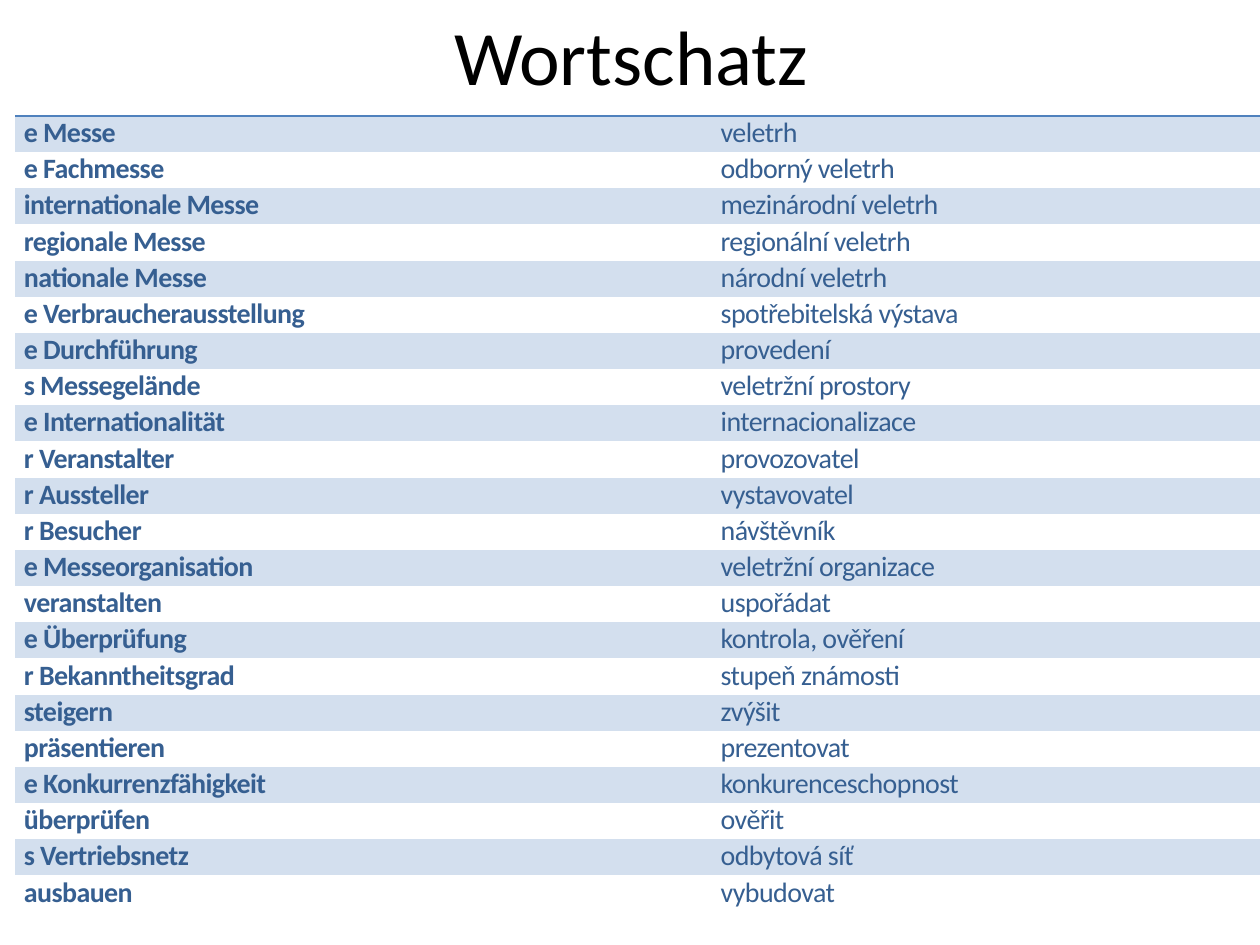
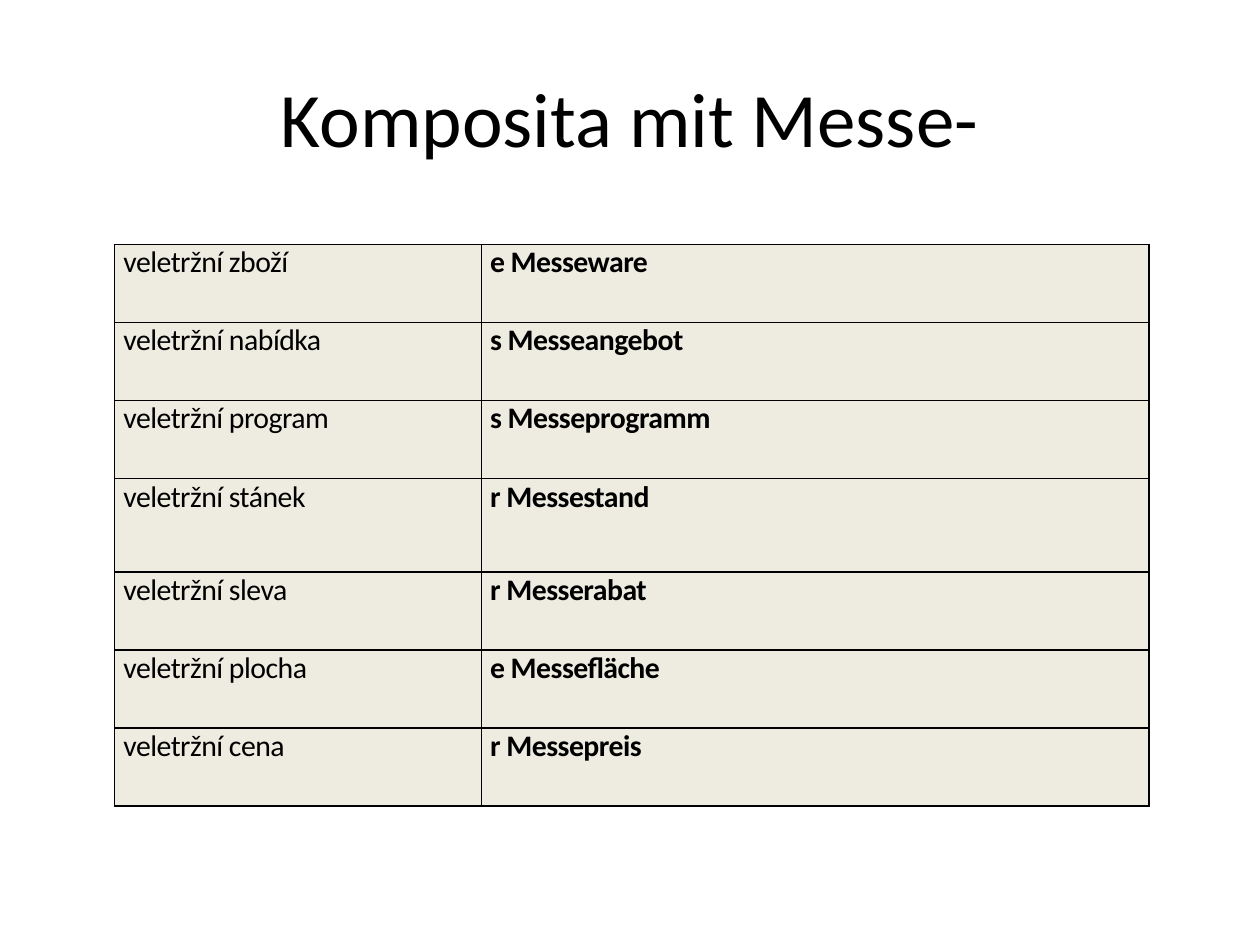
from pptx import Presentation
from pptx.dml.color import RGBColor
from pptx.enum.text import MSO_ANCHOR as Anchor, PP_ALIGN as Align
from pptx.oxml.ns import qn
from pptx.oxml.xmlchemy import OxmlElement as Element
from pptx.util import Inches, Pt

FONT = "Calibri"
BLACK = "000000"
TEXT_BLUE = "365F91"
BAND_BLUE = "D3DFEE"
RULE_BLUE = "4F81BD"
CREAM = "EEECE1"
PLAIN_TABLE_STYLE = "{2D5ABB26-0587-4C30-8999-92F81FD0307C}"

VOCABULARY = [
    ("e Messe", "veletrh"),
    ("e Fachmesse", "odborný veletrh"),
    ("internationale Messe", "mezinárodní veletrh"),
    ("regionale Messe", "regionální veletrh"),
    ("nationale Messe", "národní veletrh"),
    ("e Verbraucherausstellung", "spotřebitelská výstava"),
    ("e Durchführung", "provedení"),
    ("s Messegelände", "veletržní prostory"),
    ("e Internationalität", "internacionalizace"),
    ("r Veranstalter", "provozovatel"),
    ("r Aussteller", "vystavovatel"),
    ("r Besucher", "návštěvník"),
    ("e Messeorganisation", "veletržní organizace"),
    ("veranstalten", "uspořádat"),
    ("e Überprüfung", "kontrola, ověření"),
    ("r Bekanntheitsgrad", "stupeň známosti"),
    ("steigern", "zvýšit"),
    ("präsentieren", "prezentovat"),
    ("e Konkurrenzfähigkeit", "konkurenceschopnost"),
    ("überprüfen", "ověřit"),
    ("s Vertriebsnetz", "odbytová síť"),
    ("ausbauen", "vybudovat"),
]
COMPOUNDS = [
    ("veletržní zboží", "e Messeware"),
    ("veletržní nabídka", "s Messeangebot"),
    ("veletržní program", "s Messeprogramm"),
    ("veletržní stánek", "r Messestand"),
    ("veletržní sleva", "r Messerabat"),
    ("veletržní plocha", "e Messefläche"),
    ("veletržní cena", "r Messepreis"),
]


def rgb(color):
    return RGBColor.from_string(color)


class Deck:
    """Holds the shared style and the slide being built."""

    def __init__(self):
        self.presentation = Presentation()
        self.presentation.slide_width = Inches(10)
        self.presentation.slide_height = Inches(7.5)
        self.slide = None

    def add_slide(self):
        layout = self.presentation.slide_layouts[6]
        self.slide = self.presentation.slides.add_slide(layout)

    def add_run(self, paragraph, text, size, color, bold=False):
        run = paragraph.add_run()
        run.text = text
        run.font.name = FONT
        run.font.size = Pt(size)
        run.font.bold = bold
        run.font.color.rgb = rgb(color)
        return run

    def add_title(self, text, left, top):
        shape = self.slide.shapes.add_textbox(
            Inches(left), Inches(top), Inches(9), Inches(1.25))
        frame = shape.text_frame
        frame.word_wrap = True
        frame.vertical_anchor = Anchor.MIDDLE
        paragraph = frame.paragraphs[0]
        paragraph.alignment = Align.CENTER
        self.add_run(paragraph, text, 44, BLACK)

    def add_table(self, rows, left, top, widths, heights):
        """Add an unstyled table; widths and heights are in inches."""
        shape = self.slide.shapes.add_table(
            len(rows), len(widths), Inches(left), Inches(top),
            Inches(sum(widths)), Inches(sum(heights)))
        table = shape.table
        table.first_row = table.horz_banding = False
        style = table._tbl.tblPr.find(qn("a:tableStyleId"))
        style.text = PLAIN_TABLE_STYLE
        for column, width in zip(table.columns, widths):
            column.width = Inches(width)
        for row, height in zip(table.rows, heights):
            row.height = Inches(height)
        return table

    def fill_cell(self, cell, text, size, color, bold, fill, sides="", line=BLACK):
        """Style and write a cell; sides names its ruled edges, e.g. "LRTB"."""
        cell.margin_left = cell.margin_right = Inches(0.07)
        cell.margin_top = cell.margin_bottom = 0
        for side in sides:
            self.add_border(cell, side, line)
        if fill:
            cell.fill.solid()
            cell.fill.fore_color.rgb = rgb(fill)
        else:
            cell.fill.background()
        paragraph = cell.text_frame.paragraphs[0]
        paragraph.alignment = Align.JUSTIFY
        run = self.add_run(paragraph, text, size, color, bold)
        run.font._element.set("spc", "-30")

    def add_border(self, cell, side, color):
        border = Element(f"a:ln{side}")
        border.set("w", str(Pt(1)))
        fill = Element("a:solidFill")
        value = Element("a:srgbClr")
        value.set("val", color)
        fill.append(value)
        border.append(fill)
        cell._tc.get_or_add_tcPr().append(border)


def add_vocabulary_slide(deck):
    deck.add_slide()
    deck.add_title("Wortschatz", 0.51, -0.19)
    count = len(VOCABULARY)
    table = deck.add_table(VOCABULARY, 0.12, 0.92, [5.53, 4.48], [6.32 / count] * count)
    for row, words in enumerate(VOCABULARY):
        for column, word in enumerate(words):
            deck.fill_cell(
                table.cell(row, column), word, 16, TEXT_BLUE, bold=column == 0,
                fill=BAND_BLUE if row % 2 == 0 else None,
                sides="T" if row == 0 else "", line=RULE_BLUE)


def add_compounds_slide(deck):
    deck.add_slide()
    deck.add_title("Komposita mit Messe-", 0.5, 0.3)
    heights = [0.62] * len(COMPOUNDS)
    heights[3] = 0.74
    table = deck.add_table(COMPOUNDS, 0.91, 1.94, [2.91, 5.3], heights)
    for row, words in enumerate(COMPOUNDS):
        for column, word in enumerate(words):
            deck.fill_cell(table.cell(row, column), word, 17, BLACK,
                           bold=column == 1, fill=CREAM, sides="LRTB")


def main():
    deck = Deck()
    add_vocabulary_slide(deck)
    add_compounds_slide(deck)
    deck.presentation.save("out.pptx")


if __name__ == "__main__":
    main()
